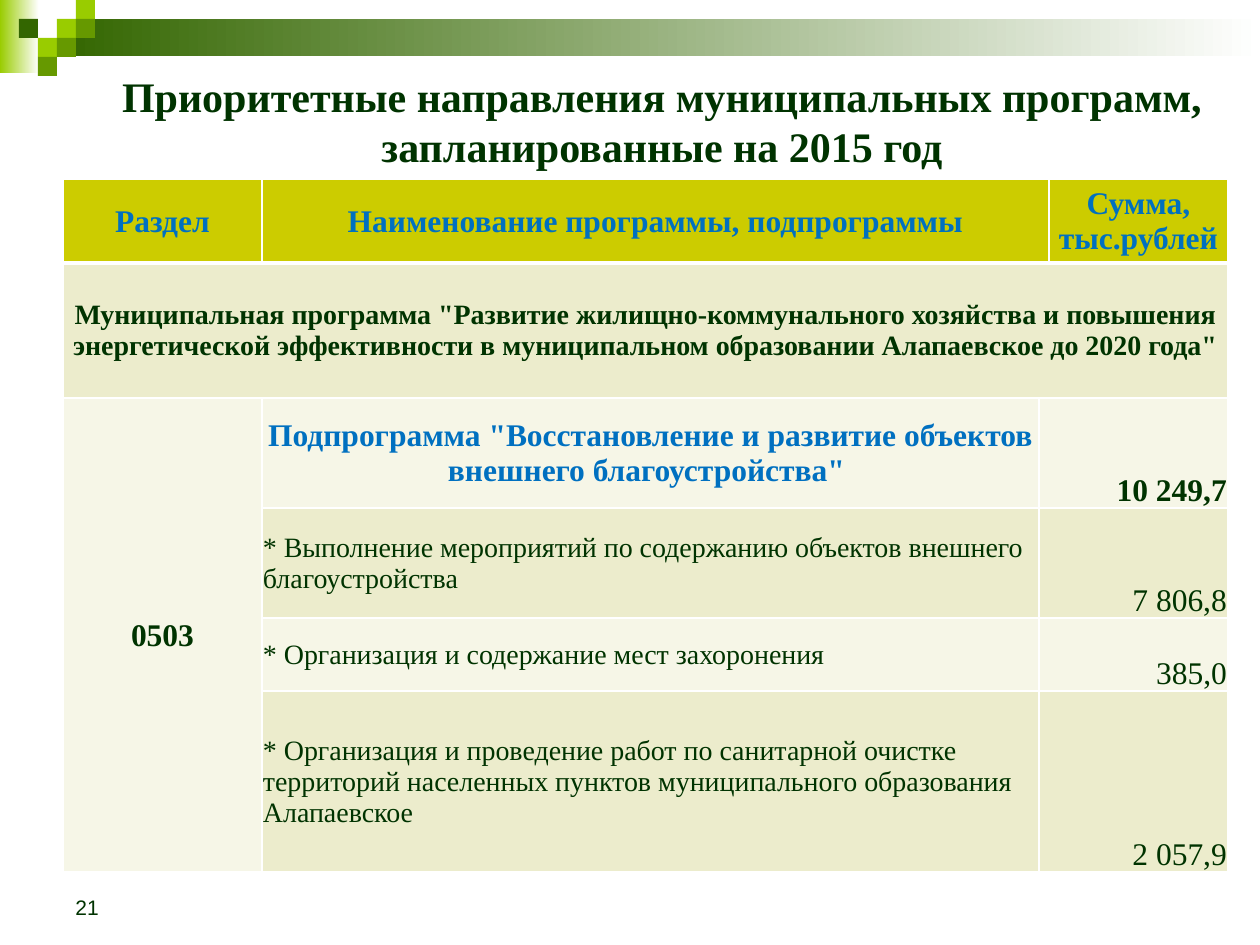
from lxml import etree
from pptx import Presentation
from pptx import util as u
from pptx.dml.color import RGBColor
from pptx.enum import shapes, text
from pptx.oxml.ns import qn

COLORS = {
    "ink": "003300", "blue": "0070C0", "white": "FFFFFF",
    "lime": "99CC00", "leaf": "669900", "forest": "336600",
    "header": "CCCC00", "band": "ECECCC", "pale": "F6F6E7",
}
SERIF = "Times New Roman"
LEFT, CENTER, RIGHT = text.PP_ALIGN.LEFT, text.PP_ALIGN.CENTER, text.PP_ALIGN.RIGHT
MIDDLE, BOTTOM = text.MSO_ANCHOR.MIDDLE, text.MSO_ANCHOR.BOTTOM

COLUMNS = [199, 777, 10, 179]
ROWS = [84, 135, 110, 110, 73, 181]
PROGRAM = ('Муниципальная программа "Развитие жилищно-коммунального хозяйства и '
           'повышения энергетической эффективности в муниципальном образовании '
           'Алапаевское до 2020 года"')
SUBPROGRAM = 'Подпрограмма "Восстановление и развитие объектов внешнего благоустройства" '
MEASURES = [
    ("* Выполнение мероприятий по содержанию объектов внешнего благоустройства", "7 806,8"),
    ("* Организация и содержание мест захоронения", "385,0"),
    ("* Организация и проведение работ по санитарной очистке территорий "
     "населенных пунктов муниципального образования Алапаевское", "2 057,9"),
]


def px(n):
    return u.Emu(round(n * 914400 / 126))


def rgb(name):
    return RGBColor.from_string(COLORS[name])


def write(frame, words, size, color="ink", font=SERIF, bold=False, align=LEFT):
    frame.text = words
    paragraph = frame.paragraphs[0]
    paragraph.alignment = align
    for run in paragraph.runs:
        run.font.name, run.font.size, run.font.bold = font, u.Pt(size), bold
        run.font.color.rgb = rgb(color)


def add_block(slide, box, color, fade=False):
    block = slide.shapes.add_shape(shapes.MSO_SHAPE.RECTANGLE, *map(px, box))
    block.shadow.inherit = False
    block.line.fill.background()
    if fade:
        block.fill.gradient()
        block.fill.gradient_angle = 0
        for stop, name in zip(block.fill.gradient_stops, (color, "white")):
            stop.color.rgb = rgb(name)
    else:
        block.fill.solid()
        block.fill.fore_color.rgb = rgb(color)


def add_ornament(slide, box):
    left, top, width, _ = box
    step = 19
    add_block(slide, (left, top, 39, 73), "lime", fade=True)
    add_block(slide, (left + 3 * step, top + step, width - 3 * step, 2 * step - 1),
              "forest", fade=True)
    # Checker squares: column, row, colour
    for col, row, color in [(3, 1, "lime"), (4, 0, "lime"), (4, 1, "leaf"), (2, 2, "lime"),
                            (1, 1, "forest"), (3, 2, "leaf"), (2, 3, "leaf")]:
        add_block(slide, (left + col * step, top + row * step, step, step), color)


def add_title(slide, box):
    title = slide.shapes.title
    title.left, title.top, title.width, title.height = map(px, box)
    frame = title.text_frame
    frame.auto_size = text.MSO_AUTO_SIZE.NONE
    frame.word_wrap = True
    frame.vertical_anchor = MIDDLE
    write(frame, "Приоритетные направления муниципальных программ, запланированные на 2015 год",
          24, bold=True, align=CENTER)


def set_borders(cell, bottom):
    properties = cell._tc.get_or_add_tcPr()
    for i, (side, width) in enumerate([("L", 1), ("R", 1), ("T", 1), ("B", bottom)]):
        line = etree.Element(qn(f"a:ln{side}"), w=str(u.Pt(width)))
        fill = etree.SubElement(line, qn("a:solidFill"))
        etree.SubElement(fill, qn("a:srgbClr"), val=COLORS["white"])
        properties.insert(i, line)


def add_programs(slide, box):
    table = slide.shapes.add_table(len(ROWS), len(COLUMNS), *map(px, box)).table
    for column, width in zip(table.columns, COLUMNS):
        column.width = px(width)
    for row, height in zip(table.rows, ROWS):
        row.height = px(height)

    # Fills, margins and borders
    row_fills = ["header", "band", "pale", "band", "pale", "band"]
    for r, color in enumerate(row_fills):
        for c in range(len(COLUMNS)):
            cell = table.cell(r, c)
            cell.fill.solid()
            cell.fill.fore_color.rgb = rgb("pale" if c == 0 and r > 1 else color)
            cell.margin_left = cell.margin_right = cell.margin_top = px(1)
            cell.margin_bottom = 0
            set_borders(cell, bottom=3 if r == 0 else 1)

    # Merged areas
    table.cell(0, 1).merge(table.cell(0, 2))
    table.cell(1, 0).merge(table.cell(1, 3))
    table.cell(2, 0).merge(table.cell(5, 0))
    for r in range(2, len(ROWS)):
        table.cell(r, 2).merge(table.cell(r, 3))

    def put(r, c, words, size=18, color="ink", bold=True, align=CENTER, anchor=MIDDLE):
        cell = table.cell(r, c)
        cell.vertical_anchor = anchor
        write(cell.text_frame, words, size, color, bold=bold, align=align)

    # Wording
    headings = {0: "Раздел", 1: "Наименование программы, подпрограммы", 3: "Сумма, тыс.рублей"}
    for c, heading in headings.items():
        put(0, c, heading, color="blue")
    put(1, 0, PROGRAM, size=16)
    put(2, 0, "0503")
    put(2, 1, SUBPROGRAM, color="blue")
    put(2, 2, "10 249,7", align=RIGHT, anchor=BOTTOM)
    for r, (measure, amount) in enumerate(MEASURES, start=3):
        put(r, 1, measure, size=16, bold=False, align=LEFT)
        put(r, 2, amount, bold=False, align=RIGHT, anchor=BOTTOM)


def add_page_number(slide, box):
    frame = slide.shapes.add_textbox(*map(px, box)).text_frame
    frame.word_wrap = True
    frame.vertical_anchor = BOTTOM
    write(frame, "21", 12, font="Arial")


def main():
    deck = Presentation()
    deck.slide_width, deck.slide_height = px(1260), px(945)
    slide = deck.slides.add_slide(deck.slide_layouts[5])
    add_ornament(slide, (0, 0, 1260, 76))
    add_title(slide, (95, 73, 1134, 95))
    add_programs(slide, (63, 179, sum(COLUMNS), sum(ROWS)))
    add_page_number(slide, (63, 861, 293, 65))
    deck.save("out.pptx")


if __name__ == "__main__":
    main()
